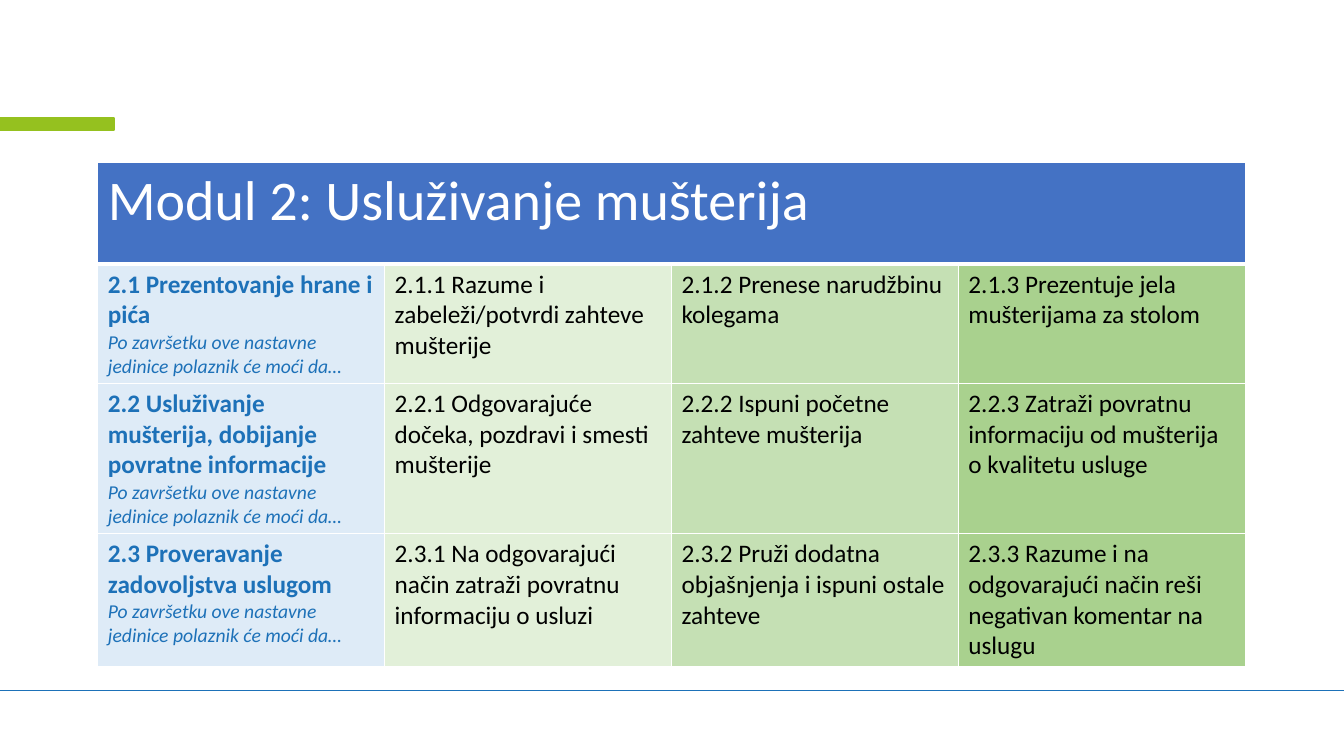
import pptx
import pptx.dml.color
import pptx.enum.shapes
import pptx.oxml
import pptx.oxml.ns
import pptx.util
from pptx.util import Inches

RGBColor = pptx.dml.color.RGBColor
WHITE = RGBColor(0xFF, 0xFF, 0xFF)
BLACK = RGBColor(0x00, 0x00, 0x00)
BLUE = RGBColor(0x1D, 0x71, 0xB8)
LIME = RGBColor(0x95, 0xC1, 0x1F)
HEADER_BLUE = RGBColor(0x44, 0x72, 0xC4)
COLUMN_FILLS = [
    RGBColor(0xDE, 0xEB, 0xF7),
    RGBColor(0xE2, 0xF0, 0xD9),
    RGBColor(0xC5, 0xE0, 0xB4),
    RGBColor(0xA9, 0xD1, 0x8E),
]

FORMATS = {
    "module": {"size": pptx.util.Pt(40), "bold": False, "italic": False, "color": WHITE},
    "unit": {"size": pptx.util.Pt(18), "bold": True, "italic": False, "color": BLUE},
    "lead_in": {"size": pptx.util.Pt(14), "bold": False, "italic": True, "color": BLUE},
    "outcome": {"size": pptx.util.Pt(18), "bold": False, "italic": False, "color": BLACK},
}

MODULE = "Modul 2: Usluživanje mušterija"
LEAD_IN = "Po završetku ove nastavne jedinice polaznik će moći da…"
UNITS = [
    ["2.1 Prezentovanje hrane i pića",
     "2.1.1 Razume i zabeleži/potvrdi zahteve mušterije",
     "2.1.2 Prenese narudžbinu kolegama",
     "2.1.3 Prezentuje jela mušterijama za stolom"],
    ["2.2 Usluživanje mušterija, dobijanje povratne informacije",
     "2.2.1 Odgovarajuće dočeka, pozdravi i smesti mušterije",
     "2.2.2 Ispuni početne zahteve mušterija",
     "2.2.3 Zatraži povratnu informaciju od mušterija o kvalitetu usluge"],
    ["2.3 Proveravanje zadovoljstva uslugom",
     "2.3.1 Na odgovarajući način zatraži povratnu informaciju o usluzi",
     "2.3.2 Pruži dodatna objašnjenja i ispuni ostale zahteve",
     "2.3.3 Razume i na odgovarajući način reši negativan komentar na uslugu"],
]


def write(paragraph, text, style):
    run = paragraph.add_run()
    run.text = text
    run.font.name = "Calibri"
    for name, value in FORMATS[style].items():
        if name == "color":
            run.font.color.rgb = value
        else:
            setattr(run.font, name, value)


def paint(cell, fill, bottom_width):
    cell.fill.solid()
    cell.fill.fore_color.rgb = fill
    properties = cell._tc.get_or_add_tcPr()
    widths = {"lnL": 1, "lnR": 1, "lnT": 1, "lnB": bottom_width}
    for position, (side, width) in enumerate(widths.items()):
        border = pptx.oxml.parse_xml(
            f'<a:{side} {pptx.oxml.ns.nsdecls("a")} w="{pptx.util.Pt(width)}">'
            f'<a:solidFill><a:srgbClr val="{WHITE}"/></a:solidFill></a:{side}>'
        )
        properties.insert(position, border)


presentation = pptx.Presentation()
presentation.slide_width = Inches(13.33)
presentation.slide_height = Inches(7.5)
slide = presentation.slides.add_slide(presentation.slide_layouts[6])

footer_rule = slide.shapes.add_connector(
    pptx.enum.shapes.MSO_CONNECTOR.STRAIGHT,
    Inches(0), Inches(6.85), Inches(13.33), Inches(6.85))
footer_rule.line.color.rgb = BLUE
footer_rule.line.width = pptx.util.Pt(1)
footer_rule._element.spPr.append(
    pptx.oxml.parse_xml(f'<a:effectLst {pptx.oxml.ns.nsdecls("a")}/>'))

accent_bar = slide.shapes.add_shape(
    pptx.enum.shapes.MSO_SHAPE.RECTANGLE,
    Inches(0), Inches(1.17), Inches(1.13), Inches(0.12))
accent_bar.shadow.inherit = False
accent_bar.fill.solid()
accent_bar.fill.fore_color.rgb = LIME
accent_bar.line.color.rgb = LIME
accent_bar.line.width = pptx.util.Pt(1)

curriculum = slide.shapes.add_table(
    len(UNITS) + 1, len(COLUMN_FILLS),
    Inches(0.97), Inches(1.61), Inches(11.38), Inches(4.49)).table
curriculum.first_row = False
curriculum.horz_banding = False
for row, height in zip(curriculum.rows, [1.01, 1.16, 1.16, 1.16]):
    row.height = Inches(height)

module_cell = curriculum.cell(0, 0)
module_cell.merge(curriculum.cell(0, len(COLUMN_FILLS) - 1))
for header_cell in curriculum.rows[0].cells:
    paint(header_cell, HEADER_BLUE, 3)
write(module_cell.text_frame.paragraphs[0], MODULE, "module")

for row_number, unit in enumerate(UNITS, start=1):
    for column, (text, fill) in enumerate(zip(unit, COLUMN_FILLS)):
        cell = curriculum.cell(row_number, column)
        paint(cell, fill, 1)
        write(cell.text_frame.paragraphs[0], text, "outcome" if column else "unit")
    write(curriculum.cell(row_number, 0).text_frame.add_paragraph(), LEAD_IN, "lead_in")

presentation.save("out.pptx")
